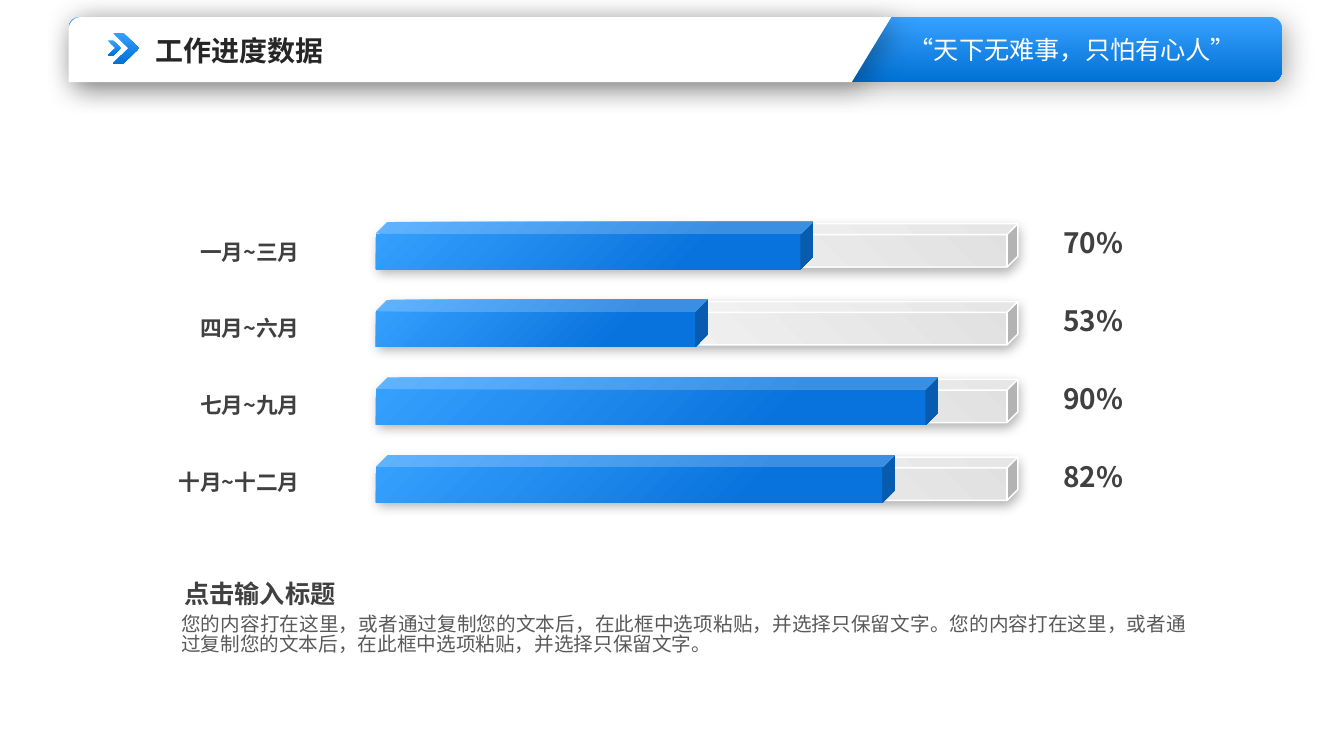
"""Build a work progress slide with four quarterly 3D progress bars."""
from math import cos, pi, sin

from lxml.etree import SubElement
from pptx import Presentation
from pptx.dml.color import RGBColor
from pptx.enum.shapes import MSO_SHAPE
from pptx.enum.text import MSO_ANCHOR, PP_ALIGN
from pptx.oxml.ns import qn
from pptx.util import Cm, Pt

FONT = "Noto Sans CJK SC"
WHITE = RGBColor(0xFF, 0xFF, 0xFF)
SKY = RGBColor(0x37, 0xA1, 0xFF)
BLUE = RGBColor(0x01, 0x71, 0xD4)
BAR_BLUE = RGBColor(0x09, 0x73, 0xDD)
SILVER = RGBColor(0xE0, 0xE0, 0xE0)
INK = RGBColor(0x26, 0x26, 0x26)
DARK = RGBColor(0x40, 0x40, 0x40)
GREY = RGBColor(0x59, 0x59, 0x59)


def paint(shape, colors, angle=90, end=1.0, shadow=None):
    if len(colors) == 1:
        shape.fill.solid()
        shape.fill.fore_color.rgb = colors[0]
    else:
        shape.fill.gradient()
        shape.fill.gradient_angle = 360 - angle
        for stop, color, position in zip(shape.fill.gradient_stops, colors, (0, end)):
            stop.color.rgb = color
            stop.position = position
    shape.line.fill.background()
    shape.shadow.inherit = False
    if shadow:
        blur, distance, direction = shadow
        effects = shape.element.spPr.find(qn("a:effectLst"))
        outer = SubElement(effects, qn("a:outerShdw"), blurRad=str(Pt(blur)),
                           dist=str(Pt(distance)), dir=str(direction * 60000),
                           algn="ctr", rotWithShape="0")
        black = SubElement(outer, qn("a:srgbClr"), val="000000")
        SubElement(black, qn("a:alpha"), val="30000")


def write(box, text, size, color, bold=False, align=PP_ALIGN.LEFT,
          anchor=MSO_ANCHOR.MIDDLE, insets=(0.38, 0.18)):
    frame = box.text_frame
    frame.word_wrap = True
    frame.vertical_anchor = anchor
    frame.margin_left = frame.margin_right = Cm(insets[0])
    frame.margin_top = frame.margin_bottom = Cm(insets[1])
    frame.text = text
    para = frame.paragraphs[0]
    para.alignment = align
    para.font.size = Pt(size)
    para.font.bold = bold
    para.font.color.rgb = color
    para.font.name = FONT
    SubElement(para._p.pPr.find(qn("a:defRPr")), qn("a:ea"), typeface=FONT)
    return para


deck = Presentation()
deck.slide_width, deck.slide_height = Cm(33.88), Cm(19.05)
page = deck.slides.add_slide(deck.slide_layouts[5])
shapes = page.shapes

header_shadow = (20, 5, 45)
banner = shapes.add_shape(MSO_SHAPE.ROUNDED_RECTANGLE, Cm(1.73), Cm(0.43), Cm(30.58), Cm(1.64))
paint(banner, (SKY, BLUE), shadow=header_shadow)

left, top, bottom, radius = 1.73, 0.43, 2.07, 0.32
corner = [(left + radius * (1 - cos(step * pi / 16)), top + radius * (1 - sin(step * pi / 16)))
          for step in range(9)]
outline = [(Cm(x), Cm(y)) for x, y in corner + [(22.47, top), (21.47, bottom), (left, bottom)]]
builder = shapes.build_freeform(*outline[0])
builder.add_line_segments(outline[1:], close=True)
paint(builder.convert_to_shape(), (WHITE,), shadow=header_shadow)

motto = shapes.add_textbox(Cm(21.97), Cm(0.74), Cm(10.13), Cm(1.02))
write(motto, "“天下无难事，只怕有心人”", 18, WHITE, align=PP_ALIGN.CENTER, insets=(0.25, 0.13))

for x, y, width, height, point in ((2.84, 0.82, 0.67, 0.79, 0.61), (2.72, 1.02, 0.33, 0.38, 0.59)):
    chevron = shapes.add_shape(MSO_SHAPE.CHEVRON, Cm(x), Cm(y), Cm(width), Cm(height))
    chevron.adjustments[0] = point
    paint(chevron, (SKY, BLUE))

title = shapes.title
title.left, title.top, title.width, title.height = Cm(3.73), Cm(0.74), Cm(6.2), Cm(1.04)
write(title, "工作进度数据", 20, INK, bold=True, insets=(0.18, 0.1))
title.element.getparent().append(title.element)

quarters = (
    ("一月~三月", "70%", 11.02),
    ("四月~六月", "53%", 8.36),
    ("七月~九月", "90%", 14.17),
    ("十月~十二月", "82%", 13.08),
)
for row, (months, percent, length) in enumerate(quarters):
    y = 5.64 + 1.96 * row
    track = shapes.add_shape(MSO_SHAPE.CUBE, Cm(9.53), Cm(y), Cm(16.13), Cm(1.09))
    paint(track, (SILVER, WHITE), angle=135, shadow=(8, 3, 90))
    track.line.color.rgb = WHITE
    track.line.width = Pt(1)
    bar = shapes.add_shape(MSO_SHAPE.CUBE, Cm(9.47), Cm(y - 0.05), Cm(length), Cm(1.19))
    paint(bar, (SKY, BAR_BLUE), angle=45, end=0.74)
    label = shapes.add_textbox(Cm(2.9), Cm(5.87 + 1.93 * row), Cm(5.03), Cm(0.94))
    write(label, months, 15.5, DARK, bold=True, align=PP_ALIGN.RIGHT)
    value = shapes.add_textbox(Cm(26.42), Cm(y), Cm(2.82), Cm(0.94))
    write(value, percent, 20, DARK, bold=True)

summary = shapes.add_textbox(Cm(4.19), Cm(15.32), Cm(26.11), Cm(2.11))
para = write(summary, "您的内容打在这里，或者通过复制您的文本后，在此框中选项粘贴，并选择只保留文字。"
             "您的内容打在这里，或者通过复制您的文本后，在此框中选项粘贴，并选择只保留文字。",
             14, GREY, align=PP_ALIGN.JUSTIFY, anchor=MSO_ANCHOR.TOP)
para.line_spacing = 0.85

heading = shapes.add_textbox(Cm(4.14), Cm(14.43), Cm(6.3), Cm(1.07))
para = write(heading, "点击输入标题", 18, DARK, bold=True, anchor=MSO_ANCHOR.TOP, insets=(0.51, 0))
para.line_spacing = 1.2

deck.save("out.pptx")
